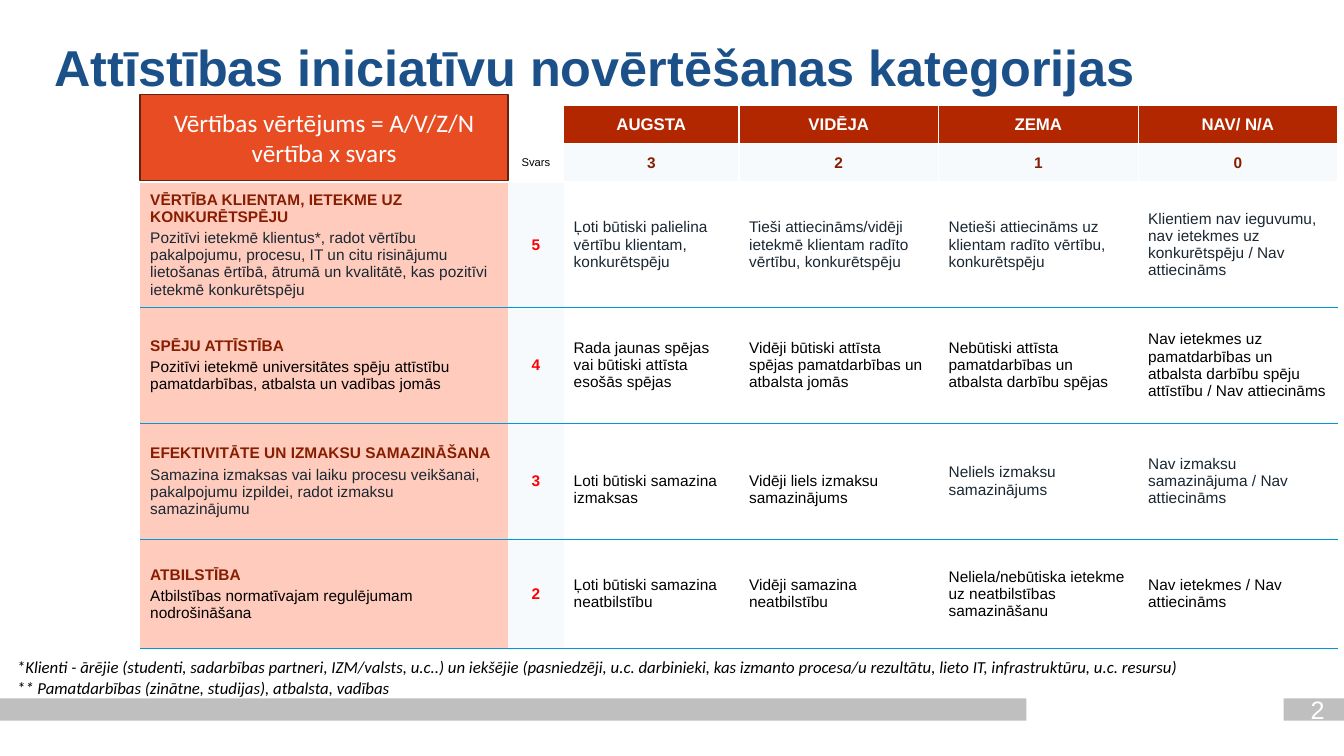
from lxml import etree
from pptx import Presentation
from pptx import util as u
from pptx.dml import color
from pptx.enum import shapes, text
from pptx.oxml import ns

WIDTH, HEIGHT = 13.33, 7.5
COLUMNS = [27.38, 4.13, 13.05, 14.85, 14.85, 14.85]
ROWS = [5.07, 5.07, 16.4, 15.33, 15.33, 14.53]
TABLE_LEFT, TABLE_TOP = 10.43, 13.95
CENTER, LEFT = text.PP_ALIGN.CENTER, text.PP_ALIGN.LEFT
WHITE, BLACK, INK, RED, BROWN = "FFFFFF", "000000", "1A2732", "FF0000", "871D00"
GREY, PALE, PEACH, BLUE = "BFBFBF", "F7FAFD", "FFCBBD", "0098D8"

LEVELS = [("AUGSTA", "3"), ("VIDĒJA", "2"), ("ZEMA", "1"), ("NAV/ N/A", "0")]
CRITERIA = [
    ("VĒRTĪBA KLIENTAM, IETEKME UZ KONKURĒTSPĒJU",
     "Pozitīvi ietekmē klientus*, radot vērtību pakalpojumu, procesu, IT un citu risinājumu "
     "lietošanas ērtībā, ātrumā un kvalitātē, kas pozitīvi ietekmē konkurētspēju",
     "5", INK,
     [("Ļoti būtiski palielina vērtību klientam, konkurētspēju", INK),
      ("Tieši attiecināms/vidēji ietekmē klientam radīto vērtību, konkurētspēju", INK),
      ("Netieši attiecināms uz klientam radīto vērtību, konkurētspēju", INK),
      ("Klientiem nav ieguvumu, nav ietekmes uz konkurētspēju / Nav attiecināms", INK)]),
    ("SPĒJU ATTĪSTĪBA",
     "Pozitīvi ietekmē universitātes spēju attīstību pamatdarbības, atbalsta un vadības jomās",
     "4", BLACK,
     [("Rada jaunas spējas vai būtiski attīsta esošās spējas", BLACK),
      ("Vidēji būtiski attīsta spējas pamatdarbības un atbalsta jomās", BLACK),
      ("Nebūtiski attīsta pamatdarbības un atbalsta darbību spējas", BLACK),
      ("Nav ietekmes uz pamatdarbības un atbalsta darbību spēju attīstību / Nav attiecināms", BLACK)]),
    ("EFEKTIVITĀTE UN IZMAKSU SAMAZINĀŠANA",
     "Samazina izmaksas vai laiku procesu veikšanai, pakalpojumu izpildei, radot izmaksu samazinājumu",
     "3", INK,
     [("Loti būtiski samazina izmaksas", BLACK),
      ("Vidēji liels izmaksu samazinājums", BLACK),
      ("Neliels izmaksu samazinājums", INK),
      ("Nav izmaksu samazinājuma / Nav attiecināms", INK)]),
    ("ATBILSTĪBA",
     "Atbilstības normatīvajam regulējumam nodrošināšana",
     "2", BLACK,
     [("Ļoti būtiski samazina neatbilstību", BLACK),
      ("Vidēji samazina neatbilstību", BLACK),
      ("Neliela/nebūtiska ietekme uz neatbilstības samazināšanu", BLACK),
      ("Nav ietekmes / Nav attiecināms", BLACK)]),
]
NOTES = [
    "*Klienti - ārējie (studenti, sadarbības partneri, IZM/valsts, u.c..) un iekšējie "
    "(pasniedzēji, u.c. darbinieki, kas izmanto procesa/u rezultātu, lieto IT, infrastruktūru, u.c. resursu)",
    "** Pamatdarbības (zinātne, studijas), atbalsta, vadības",
]


def across(share):
    return u.Inches(WIDTH * share / 100)


def down(share):
    return u.Inches(HEIGHT * share / 100)


def area(left, top, width, height):
    return across(left), down(top), across(width), down(height)


def paint(target, value):
    target.rgb = color.RGBColor.from_string(value)


def write(para, words, size, ink, bold=False, italic=False, align=LEFT, face="Arial"):
    para.text = words
    para.alignment = align
    font = para.font
    font.name, font.size, font.bold, font.italic = face, u.Pt(size), bold, italic
    paint(font.color, ink)


def add_box(page, place, fill, line=None):
    box = page.shapes.add_shape(shapes.MSO_SHAPE.RECTANGLE, *area(*place))
    box.shadow.inherit = False
    box.fill.solid()
    paint(box.fill.fore_color, fill)
    if line:
        paint(box.line.color, line)
        box.line.width = u.Pt(1)
    else:
        box.line.fill.background()
    return box


def add_text(page, place, lines, size, ink, **style):
    frame = page.shapes.add_textbox(*area(*place)).text_frame
    frame.word_wrap = True
    for index, words in enumerate(lines):
        para = frame.add_paragraph() if index else frame.paragraphs[0]
        write(para, words, size, ink, **style)


def set_borders(cell, **edges):
    properties = cell._tc.get_or_add_tcPr()
    for side in "LRTB":
        line = etree.SubElement(properties, ns.qn(f"a:ln{side}"))
        if side not in edges:
            etree.SubElement(line, ns.qn("a:noFill"))
            continue
        ink, points = edges[side]
        line.set("w", str(u.Pt(points)))
        solid = etree.SubElement(line, ns.qn("a:solidFill"))
        etree.SubElement(solid, ns.qn("a:srgbClr"), val=ink)


def style_cell(cell, fill, **edges):
    set_borders(cell, **edges)
    if fill:
        cell.fill.solid()
        paint(cell.fill.fore_color, fill)
    else:
        cell.fill.background()
    cell.vertical_anchor = text.MSO_ANCHOR.MIDDLE
    return cell.text_frame


def fill_cell(cell, words, size, ink, fill, edges, bold=False, align=CENTER):
    frame = style_cell(cell, fill, **edges)
    if words:
        write(frame.paragraphs[0], words, size, ink, bold, align=align)
    else:
        cell.margin_top = cell.margin_bottom = 0


def fill_heading(table):
    edges = dict.fromkeys("LRTB", (WHITE, 1))
    for row, column in [(0, 0), (0, 1), (1, 0)]:
        fill_cell(table.cell(row, column), "", 8, BLACK, None, edges)
    fill_cell(table.cell(1, 1), "Svars", 8, BLACK, WHITE, edges)
    for column, (level, points) in enumerate(LEVELS, 2):
        fill_cell(table.cell(0, column), level, 12, WHITE, "B22600", edges, True)
        fill_cell(table.cell(1, column), points, 11, BROWN, PALE, edges, True)


def fill_criterion(table, row, name, detail, weight, ink, ratings):
    edges = {"T": (WHITE, 1) if row == 2 else (BLUE, 0.75), "B": (BLUE, 0.75)}
    frame = style_cell(table.cell(row, 0), PEACH, **edges)
    write(frame.paragraphs[0], name, 11, BROWN, True)
    write(frame.add_paragraph(), detail, 11, ink)
    for para in frame.paragraphs:
        para.space_after = u.Pt(3)
    fill_cell(table.cell(row, 1), weight, 11, RED, PALE, edges, True)
    for column, (words, shade) in enumerate(ratings, 2):
        fill_cell(table.cell(row, column), words, 11, shade, None, edges, align=LEFT)


def add_ratings_table(page):
    place = area(TABLE_LEFT, TABLE_TOP, sum(COLUMNS), sum(ROWS))
    table = page.shapes.add_table(len(ROWS), len(COLUMNS), *place).table
    table.first_row = table.horz_banding = False
    for column, share in zip(table.columns, COLUMNS):
        column.width = across(share)
    for row, share in zip(table.rows, ROWS):
        row.height = down(share)
    fill_heading(table)
    for row, criterion in enumerate(CRITERIA, 2):
        fill_criterion(table, row, *criterion)
    for column in (2, 3):
        table.cell(4, column).margin_top = u.Inches(0.22)


def add_title(page, words):
    title = page.shapes.title
    title.left, title.top, title.width, title.height = area(3.3, 1.33, 93.55, 16)
    frame = title.text_frame
    frame.word_wrap = True
    frame.auto_size = text.MSO_AUTO_SIZE.NONE
    frame.vertical_anchor = text.MSO_ANCHOR.MIDDLE
    write(frame.paragraphs[0], words, 36, "1B5089", True)
    frame.paragraphs[0].line_spacing = 0.9


def add_formula(page, words):
    box = add_box(page, (TABLE_LEFT, 12.53, COLUMNS[0], 11.33), "E84C22", "66210F")
    box.text_frame.word_wrap = True
    box.text_frame.vertical_anchor = text.MSO_ANCHOR.MIDDLE
    write(box.text_frame.paragraphs[0], words, 18, WHITE, align=CENTER, face="Calibri")


def main():
    deck = Presentation()
    deck.slide_width, deck.slide_height = u.Inches(WIDTH), u.Inches(HEIGHT)
    page = deck.slides.add_slide(deck.slide_layouts[5])
    for left, width in [(0, 76.37), (95.5, 4.5)]:
        add_box(page, (left, 92.4, width, 2.93), GREY)
    add_text(page, (95.57, 91.2, 4.95, 4.8), ["2"], 18, WHITE, align=CENTER)
    add_title(page, "Attīstības iniciatīvu novērtēšanas kategorijas")
    add_ratings_table(page)
    add_text(page, (0.53, 86.27, 89.12, 6.67), NOTES, 12, BLACK, italic=True, face="Calibri")
    add_formula(page, "Vērtības vērtējums = A/V/Z/N vērtība x svars")
    deck.save("out.pptx")


if __name__ == "__main__":
    main()
